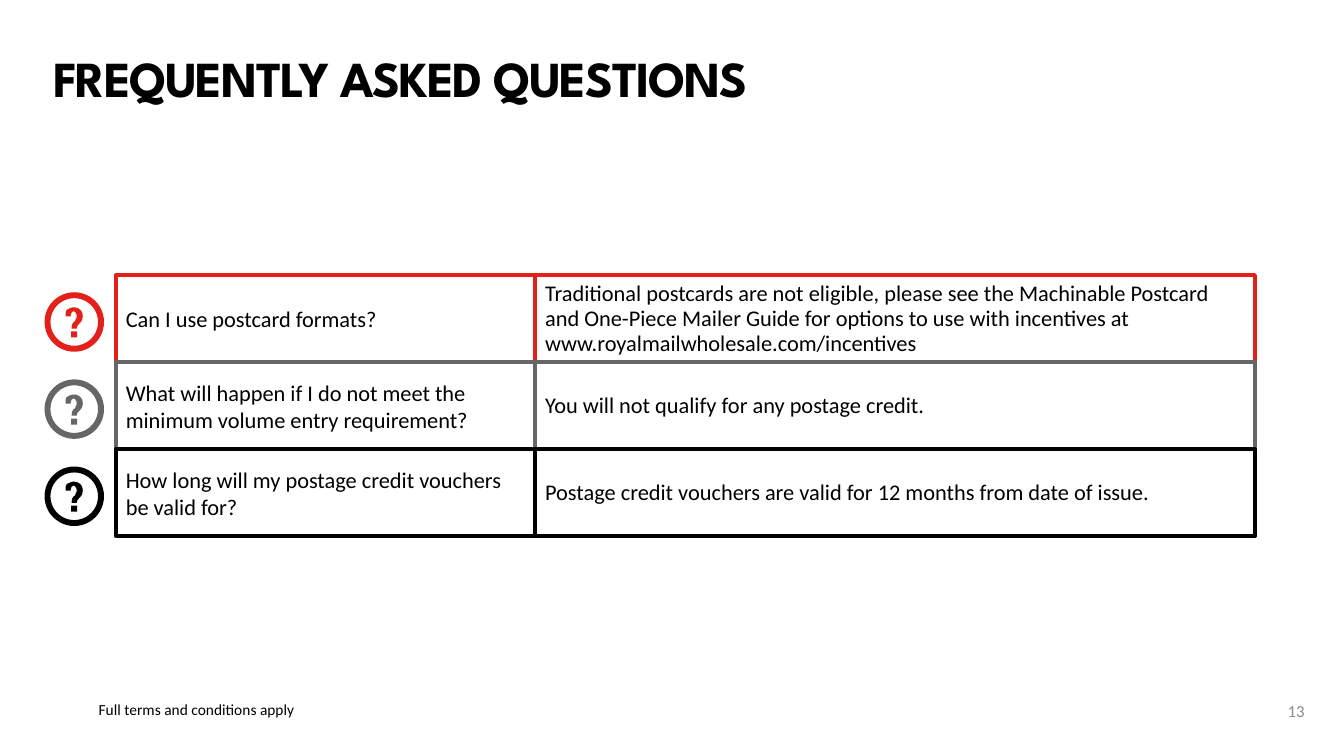
from pptx import Presentation
from pptx.dml.color import RGBColor
from pptx.enum import shapes, text
from pptx.util import Pt

RED = RGBColor(0xE3, 0x20, 0x19)
GREY = RGBColor(0x66, 0x66, 0x66)
BLACK = RGBColor(0, 0, 0)
PALE_GREY = RGBColor(0x8C, 0x8C, 0x8C)

FAQS = [
    (RED, "Can I use postcard formats?",
     "Traditional postcards are not eligible, please see the Machinable Postcard and One-Piece "
     "Mailer Guide for options to use with incentives at www.royalmailwholesale.com/incentives"),
    (GREY, "What will happen if I do not meet the minimum volume entry requirement?",
     "You will not qualify for any postage credit."),
    (BLACK, "How long will my postage credit vouchers be valid for?",
     "Postage credit vouchers are valid for 12 months from date of issue."),
]
ROW_PITCH = 62.25
ICON_SIZE = 42.5
HOOK_UNIT = 0.72
HOOK_START = (27, 36)
HOOK_CURVES = [
    [(27, 32), (28, 30), (30, 29)],
    [(31, 28), (31, 27), (31, 26)],
    [(32, 26), (32, 25), (32, 23)],
    [(32, 22), (32, 22), (31, 21)],
    [(31, 20), (30, 19), (29, 19)],
    [(28, 19), (26, 20), (26, 24)],
    [(21, 24)],
    [(21, 23)],
    [(21, 20), (21, 18), (23, 17)],
    [(25, 16), (27, 15), (29, 15)],
    [(32, 15), (34, 16), (36, 18)],
    [(37, 19), (38, 21), (38, 24)],
    [(38, 31), (32, 31), (32, 36)],
]


def write(tf, words, size, color, font="Calibri", spacing=None, align=text.PP_ALIGN.LEFT):
    tf.text = words
    tf.word_wrap = True
    p = tf.paragraphs[0]
    p.alignment = align
    p.line_spacing = spacing
    r = p.runs[0]
    r.font.name = font
    r.font.size = Pt(size)
    r.font.color.rgb = color
    return r


def clear_margins(tf, sides):
    tf.margin_left = tf.margin_right = Pt(sides)
    tf.margin_top = tf.margin_bottom = 0


def add_title(s, left, top, width, height):
    sp = s.shapes.title
    sp.left, sp.top, sp.width, sp.height = Pt(left), Pt(top), Pt(width), Pt(height)
    tf = sp.text_frame
    clear_margins(tf, 0)
    tf.vertical_anchor = text.MSO_ANCHOR.TOP
    r = write(tf, "FREQUENTLY ASKED QUESTIONS", 36, BLACK, "League Spartan", Pt(44))
    r.font.bold = True
    r.font._element.set("spc", "-100")


def fill_plain(sp, color):
    sp.shadow.inherit = False
    sp.fill.solid()
    sp.fill.fore_color.rgb = color
    sp.line.fill.background()


def flatten(start, curves, steps=6):
    points = [start]
    for curve in curves:
        if len(curve) == 1:
            points += curve
            continue
        a, (b, c, d) = points[-1], curve
        for i in range(1, steps + 1):
            t = i / steps
            points.append(tuple(
                (1 - t) ** 3 * a[k] + 3 * t * (1 - t) ** 2 * b[k]
                + 3 * t ** 2 * (1 - t) * c[k] + t ** 3 * d[k] for k in (0, 1)))
    return points


def add_question_icon(s, left, top, color):
    ring = s.shapes.add_shape(shapes.MSO_SHAPE.DONUT, Pt(left), Pt(top),
                              Pt(ICON_SIZE), Pt(ICON_SIZE))
    ring.adjustments[0] = 0.1
    dot = s.shapes.add_shape(shapes.MSO_SHAPE.RECTANGLE, Pt(left + 19), Pt(top + 28),
                             Pt(4.3), Pt(4.3))
    points = [(Pt(left + x * HOOK_UNIT), Pt(top + y * HOOK_UNIT))
              for x, y in flatten(HOOK_START, HOOK_CURVES)]
    builder = s.shapes.build_freeform(*points[0])
    builder.add_line_segments(points[1:], close=True)
    for sp in (ring, dot, builder.convert_to_shape()):
        fill_plain(sp, color)


def add_cell(s, left, top, width, height, color, words, spacing):
    sp = s.shapes.add_shape(shapes.MSO_SHAPE.RECTANGLE, Pt(left), Pt(top), Pt(width), Pt(height))
    sp.shadow.inherit = False
    sp.fill.background()
    sp.line.color.rgb = color
    sp.line.width = Pt(3)
    sp.text_frame.vertical_anchor = text.MSO_ANCHOR.MIDDLE
    write(sp.text_frame, words, 16, BLACK, spacing=spacing)


def add_faq_rows(s, left, top, question_width, answer_width):
    for i, (color, question, answer) in enumerate(FAQS):
        y = top + i * ROW_PITCH
        add_cell(s, left, y, question_width, 62, color, question, None)
        add_cell(s, left + question_width, y, answer_width, 62, color, answer, Pt(18))
        add_question_icon(s, left - 51, y + 12.25, color)


def add_footer(s, left, top, width, height):
    note = s.shapes.add_textbox(Pt(left), Pt(top), Pt(width), Pt(height)).text_frame
    clear_margins(note, 7.2)
    write(note, "Full terms and conditions apply", 11, BLACK, spacing=0.9)
    number = s.shapes.add_textbox(Pt(left + 846), Pt(top - 8.5), Pt(29.5), Pt(29)).text_frame
    number.vertical_anchor = text.MSO_ANCHOR.MIDDLE
    write(number, "13", 12, PALE_GREY, align=text.PP_ALIGN.RIGHT)


def main():
    prs = Presentation()
    prs.slide_width, prs.slide_height = Pt(960), Pt(540)
    s = prs.slides.add_slide(prs.slide_layouts[5])
    add_title(s, 38, 32.5, 793, 37.5)
    add_faq_rows(s, 82.8, 196.5, 299.5, 514)
    add_footer(s, 63.4, 501.8, 410, 11)
    prs.save("out.pptx")


if __name__ == "__main__":
    main()
